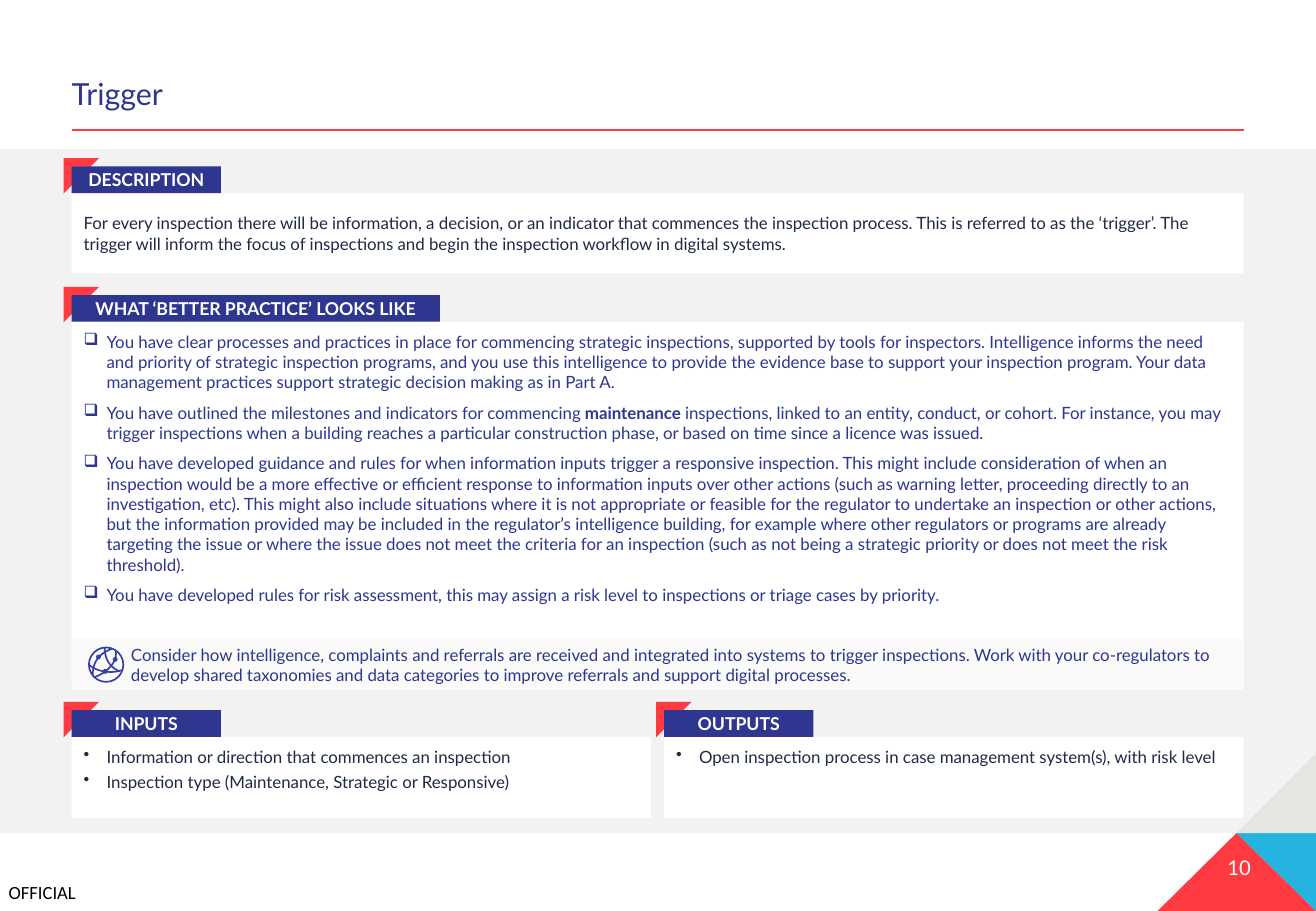
from lxml.etree import SubElement
from pptx import Presentation
from pptx.dml.color import RGBColor
from pptx.enum.shapes import MSO_CONNECTOR, MSO_SHAPE
from pptx.enum.text import MSO_ANCHOR, MSO_AUTO_SIZE, PP_ALIGN
from pptx.oxml.ns import qn
from pptx.util import Cm, Pt

NAVY, RED, WHITE, INK = "2E368F", "FF3A40", "FFFFFF", "1F2A44"
BLUE, STONE, GREY, BAND, ICON = "25B3E0", "E6E6E1", "F2F2F2", "FAFAF9", "363FA7"

WIDTH, HEIGHT = 27.52, 19.05
LEFT, FULL, HALF = 1.5, 24.51, 12.12
RIGHT_HALF = LEFT + FULL - HALF
TAB_HEIGHT, CORNER, CORNER_OFFSET = 0.56, 0.74, 0.17
INDENT = 0.48
FOOT = 17.42  # bottom of the grey background
PEAK = 25.86  # where the three corner triangles meet

DESCRIPTION = [
    "For every inspection there will be information, a decision, or an indicator that commences the inspection "
    "process. This is referred to as the ‘trigger’. The trigger will inform the focus of inspections and begin "
    "the inspection workflow in digital systems."]
# A paragraph given as a tuple alternates between regular and bold runs.
PRACTICE = [
    "You have clear processes and practices in place for commencing strategic inspections, supported by tools for "
    "inspectors. Intelligence informs the need and priority of strategic inspection programs, and you use this "
    "intelligence to provide the evidence base to support your inspection program. Your data management practices "
    "support strategic decision making as in Part A.",
    ("You have outlined the milestones and indicators for commencing ", "maintenance",
     " inspections, linked to an entity, conduct, or cohort. For instance, you may trigger inspections when a "
     "building reaches a particular construction phase, or based on time since a licence was issued."),
    "You have developed guidance and rules for when information inputs trigger a responsive inspection. This might "
    "include consideration of when an inspection would be a more effective or efficient response to information "
    "inputs over other actions (such as warning letter, proceeding directly to an investigation, etc). This might "
    "also include situations where it is not appropriate or feasible for the regulator to undertake an inspection "
    "or other actions, but the information provided may be included in the regulator’s intelligence building, for "
    "example where other regulators or programs are already targeting the issue or where the issue does not meet "
    "the criteria for an inspection (such as not being a strategic priority or does not meet the risk threshold).",
    "You have developed rules for risk assessment, this may assign a risk level to inspections or triage cases by "
    "priority."]
INPUTS = ["Information or direction that commences an inspection",
          "Inspection type (Maintenance, Strategic or Responsive)"]
OUTPUTS = ["Open inspection process in case management system(s), with risk level"]
NOTE = ["Consider how intelligence, complaints and referrals are received and integrated into systems to trigger "
        "inspections. Work with your co-regulators to develop shared taxonomies and data categories to improve "
        "referrals and support digital processes."]

# heading, tab width, left, top, width, height, paragraphs, text format
SECTIONS = [
    ("DESCRIPTION", 3.12, LEFT, 4.04, FULL, 1.68, DESCRIPTION, dict(color=INK, anchor=MSO_ANCHOR.MIDDLE)),
    ("WHAT ‘BETTER PRACTICE’ LOOKS LIKE", 7.7, LEFT, 6.73, FULL, 7.59, PRACTICE,
     dict(color=NAVY, bullet="❑", gap=6)),
    ("INPUTS", 3.12, LEFT, 15.41, HALF, 1.7, INPUTS, dict(color=INK, bullet="•", gap=3)),
    ("OUTPUTS", 3.12, RIGHT_HALF, 15.41, HALF, 1.7, OUTPUTS, dict(color=INK, bullet="•", gap=3)),
]
TRIANGLES = [
    (RED, [(PEAK, FOOT), (PEAK - 1.65, HEIGHT), (WIDTH, HEIGHT)]),
    (BLUE, [(WIDTH, FOOT), (PEAK, FOOT), (WIDTH, HEIGHT)]),
    (STONE, [(WIDTH, FOOT - 1.67), (PEAK, FOOT), (WIDTH, FOOT)]),
]
GLOBE_X, GLOBE_Y, GLOBE_RADIUS, NODE_RADIUS = 2.22, 13.9, 0.36, 0.05
# Bezier curves and nodes, relative to the centre of the globe
GLOBE_CURVES = [
    [(-0.03, -0.36), (-0.03, -0.09), (0.1, 0.06), (0.28, 0.14)],
    [(0.12, -0.33), (-0.14, -0.24), (-0.28, -0.06), (-0.28, 0.22)],
    [(-0.36, 0), (-0.2, 0.14), (0.1, 0.2), (0.34, 0.11)],
    [(0.2, -0.29), (0.25, -0.05), (0, 0.18), (-0.24, 0.26)],
]
GLOBE_NODES = [(-0.16, -0.16), (0.19, -0.11), (-0.02, 0.14)]


def rgb(color):
    return RGBColor.from_string(color)


def add_box(kind, left, top, width, height, fill):
    shape = slide.shapes.add_shape(kind, Cm(left), Cm(top), Cm(width), Cm(height))
    shape.shadow.inherit = False
    shape.fill.solid()
    shape.fill.fore_color.rgb = rgb(fill)
    shape.line.fill.background()
    return shape


def add_outline(points, closed):
    builder = slide.shapes.build_freeform(Cm(points[0][0]), Cm(points[0][1]))
    builder.add_line_segments([(Cm(x), Cm(y)) for x, y in points[1:]], close=closed)
    shape = builder.convert_to_shape()
    shape.shadow.inherit = False
    return shape


def write(shape, paragraphs, color, size=10, font="Lato", bold=False, align=PP_ALIGN.LEFT,
          anchor=MSO_ANCHOR.TOP, bullet=None, gap=0, indent=0, margins=(0.25, 0.2)):
    frame = shape.text_frame
    frame.word_wrap = True
    frame.auto_size = MSO_AUTO_SIZE.NONE
    frame.vertical_anchor = anchor
    frame.margin_left = frame.margin_right = Cm(margins[0])
    frame.margin_top = frame.margin_bottom = Cm(margins[1])
    for index, content in enumerate(paragraphs):
        paragraph = frame.paragraphs[0] if index == 0 else frame.add_paragraph()
        paragraph.alignment = align
        if index:
            paragraph.space_before = Pt(gap)
        properties = paragraph._p.get_or_add_pPr()
        if bullet:
            properties.set("marL", str(Cm(INDENT)))
            properties.set("indent", str(-Cm(INDENT)))
            SubElement(properties, qn("a:buChar"), char=bullet)
        elif indent:
            properties.set("marL", str(Cm(indent)))
        paragraph.font.name = font
        paragraph.font.size = Pt(size)
        paragraph.font.bold = bold
        paragraph.font.color.rgb = rgb(color)
        pieces = (content,) if isinstance(content, str) else content
        for position, piece in enumerate(pieces):
            run = paragraph.add_run()
            run.text = piece
            if position % 2:
                run.font.bold = True


def add_label(text, left, top, width, height, **text_format):
    label = slide.shapes.add_textbox(Cm(left), Cm(top), Cm(width), Cm(height))
    write(label, [text], **text_format)


def add_section(heading, tab_width, left, top, width, height, paragraphs, text_format):
    """Add a white panel with a red corner and a heading tab on its top edge."""
    write(add_box(MSO_SHAPE.RECTANGLE, left, top, width, height, WHITE), paragraphs, **text_format)
    tab_top = top - TAB_HEIGHT
    corner = add_box(MSO_SHAPE.HALF_FRAME, left - CORNER_OFFSET, tab_top - CORNER_OFFSET, CORNER, CORNER, RED)
    corner.adjustments[0] = corner.adjustments[1] = 0.24
    tab = add_box(MSO_SHAPE.RECTANGLE, left, tab_top, tab_width, TAB_HEIGHT, NAVY)
    write(tab, [heading], WHITE, size=10.5, bold=True, align=PP_ALIGN.CENTER,
          anchor=MSO_ANCHOR.MIDDLE, margins=(0.25, 0.13))


def bezier(points, steps=12):
    """Return points along a cubic curve."""
    start, first, second, end = points
    curve = []
    for step in range(steps + 1):
        t = step / steps
        u = 1 - t
        curve.append(tuple(u**3 * a + 3 * u * u * t * b + 3 * u * t * t * c + t**3 * d
                           for a, b, c, d in zip(start, first, second, end)))
    return curve


def add_globe():
    ring = add_box(MSO_SHAPE.OVAL, GLOBE_X - GLOBE_RADIUS, GLOBE_Y - GLOBE_RADIUS,
                   2 * GLOBE_RADIUS, 2 * GLOBE_RADIUS, BAND)
    curves = [add_outline([(GLOBE_X + x, GLOBE_Y + y) for x, y in bezier(points)], closed=False)
              for points in GLOBE_CURVES]
    for curve in curves:
        curve.fill.background()
    for shape in [ring, *curves]:
        shape.line.color.rgb = rgb(ICON)
        shape.line.width = Pt(1)
    for x, y in GLOBE_NODES:
        add_box(MSO_SHAPE.OVAL, GLOBE_X + x - NODE_RADIUS, GLOBE_Y + y - NODE_RADIUS,
                2 * NODE_RADIUS, 2 * NODE_RADIUS, ICON)


presentation = Presentation()
presentation.slide_width, presentation.slide_height = Cm(WIDTH), Cm(HEIGHT)
slide = presentation.slides.add_slide(presentation.slide_layouts[5])

add_box(MSO_SHAPE.RECTANGLE, 0, 3.12, WIDTH, FOOT - 3.12, GREY)
for color, points in TRIANGLES:
    triangle = add_outline(points, closed=True)
    triangle.fill.solid()
    triangle.fill.fore_color.rgb = rgb(color)
    triangle.line.fill.background()
add_label("OFFICIAL", 0.18, 18.42, 1.8, 0.46, color="000000", size=11, font="Calibri", margins=(0, 0))
add_label("10", 23.95, 17.75, 2.21, 0.76, color=WHITE, size=12, align=PP_ALIGN.RIGHT, margins=(0, 0.13))

rule = slide.shapes.add_connector(MSO_CONNECTOR.STRAIGHT, Cm(LEFT), Cm(2.71), Cm(LEFT + FULL), Cm(2.71))
rule.line.color.rgb = rgb(RED)
rule.line.width = Pt(1.25)
SubElement(rule._element.spPr, qn("a:effectLst"))

title = slide.shapes.title
title.left, title.top, title.width, title.height = Cm(LEFT), Cm(1.5), Cm(FULL), Cm(0.97)
write(title, ["Trigger"], NAVY, size=18, anchor=MSO_ANCHOR.BOTTOM, margins=(0, 0.13))
title.text_frame.paragraphs[0].line_spacing = 0.9

for section in SECTIONS:
    add_section(*section)
note = add_box(MSO_SHAPE.RECTANGLE, LEFT, 13.36, FULL, 1.07, BAND)
write(note, NOTE, NAVY, anchor=MSO_ANCHOR.MIDDLE, indent=0.99)
add_globe()

presentation.save("out.pptx")
